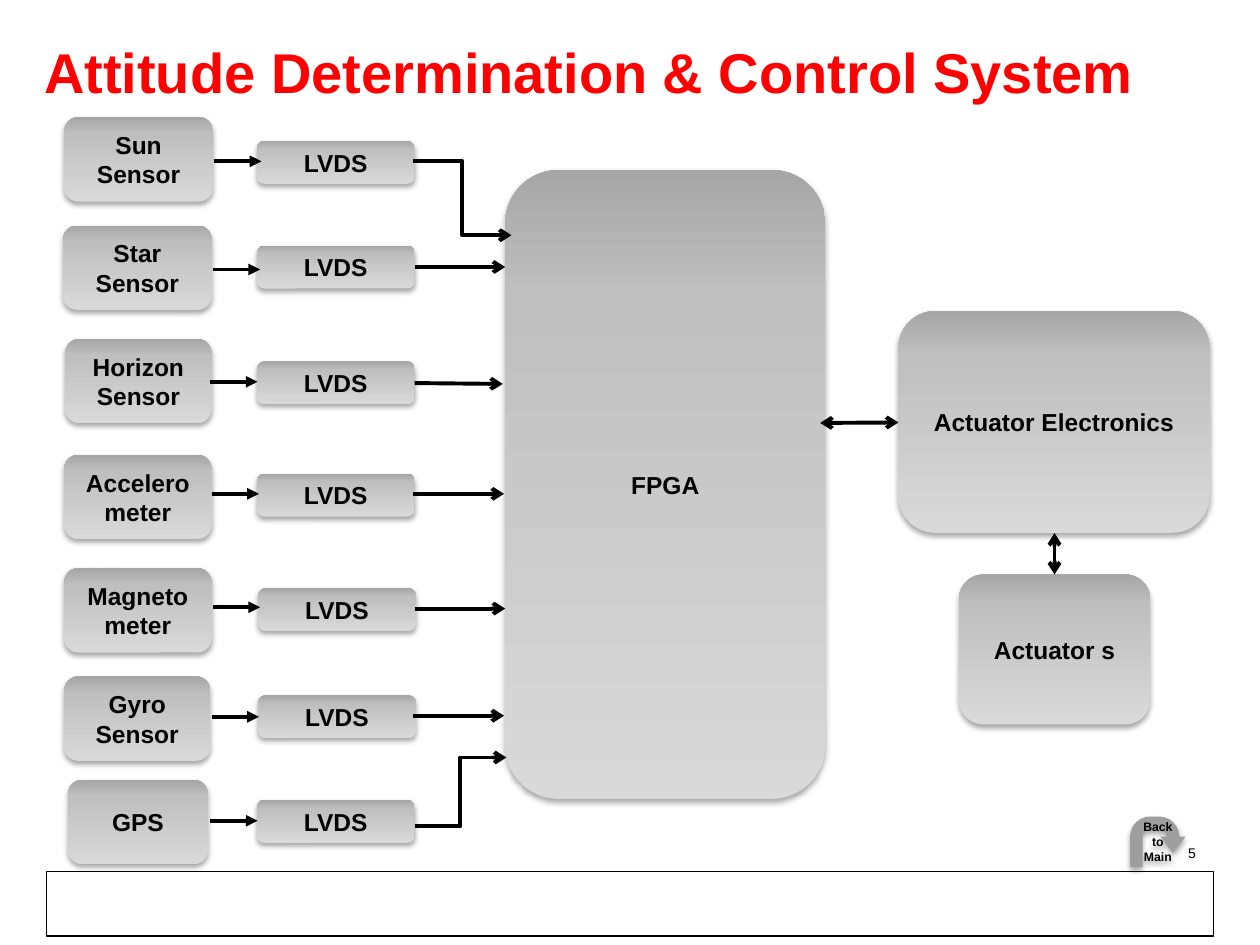
from lxml.etree import SubElement
from pptx import Presentation
from pptx.dml.color import RGBColor
from pptx.enum.shapes import MSO_CONNECTOR, MSO_SHAPE
from pptx.enum.text import MSO_ANCHOR, PP_ALIGN
from pptx.oxml import parse_xml
from pptx.oxml.ns import nsdecls, qn
from pptx.util import Pt

COLORS = {"title": "FF0000", "ink": "000000", "arrow": "9E9E9E",
          "bottom": "D9D9D9", "middle": "BFBFBF", "top": "A6A6A6"}
GRADIENT = f"""<a:gradFill {nsdecls('a')} rotWithShape="1"><a:gsLst>
<a:gs pos="0"><a:srgbClr val="{COLORS['bottom']}"/></a:gs>
<a:gs pos="80000"><a:srgbClr val="{COLORS['middle']}"/></a:gs>
<a:gs pos="100000"><a:srgbClr val="{COLORS['top']}"/></a:gs>
</a:gsLst><a:lin ang="16200000" scaled="0"/></a:gradFill>"""
SHADOW = f"""<a:effectLst {nsdecls('a')}>
<a:outerShdw blurRad="40000" dist="23000" dir="5400000" rotWithShape="0">
<a:srgbClr val="{COLORS['ink']}"><a:alpha val="35000"/></a:srgbClr>
</a:outerShdw></a:effectLst>"""


def add_box(text, left, top, width, height, size=14, kind=MSO_SHAPE.ROUNDED_RECTANGLE):
    """Add a shadowed shape with bold centred text; rounded boxes get the grey gradient."""
    box = slide.shapes.add_shape(kind, Pt(left), Pt(top), Pt(width), Pt(height))
    box.line.fill.background()
    properties = box._element.spPr
    if kind == MSO_SHAPE.ROUNDED_RECTANGLE:
        properties.find(qn("a:prstGeom")).addnext(parse_xml(GRADIENT))
    else:
        box.fill.solid()
        box.fill.fore_color.rgb = RGBColor.from_string(COLORS["arrow"])
    properties.append(parse_xml(SHADOW))
    box.text_frame.text = text
    box.text_frame.word_wrap = True
    box.text_frame.vertical_anchor = MSO_ANCHOR.MIDDLE
    para = box.text_frame.paragraphs[0]
    para.alignment = PP_ALIGN.CENTER
    font = para.runs[0].font
    font.name, font.size, font.bold = "Arial", Pt(size), True
    font.color.rgb = RGBColor.from_string(COLORS["ink"])
    return box


def add_arrow(start, end, tip="arrow", double=False):
    """Join two points, with an elbow where their heights differ clearly."""
    bent = abs(start[0] - end[0]) > 5 and abs(start[1] - end[1]) > 5
    kind = MSO_CONNECTOR.ELBOW if bent else MSO_CONNECTOR.STRAIGHT
    arrow = slide.shapes.add_connector(kind, *(Pt(value) for value in (*start, *end)))
    arrow.line.width = Pt(2.25)
    arrow.line.color.rgb = RGBColor.from_string(COLORS["ink"])
    line = arrow.line._ln
    if double:
        SubElement(line, qn("a:headEnd"), type=tip)
    SubElement(line, qn("a:tailEnd"), type=tip)
    SubElement(arrow._element.spPr, qn("a:effectLst"))


deck = Presentation()
deck.slide_width, deck.slide_height = Pt(720), Pt(540)
slide = deck.slides.add_slide(deck.slide_layouts[5])

footer = slide.shapes.add_shape(MSO_SHAPE.RECTANGLE, Pt(26.6), Pt(498.2), Pt(666.7), Pt(36.7))
footer.shadow.inherit = False
footer.fill.background()
footer.line.width = Pt(0.75)
footer.line.color.rgb = RGBColor.from_string(COLORS["ink"])

title = slide.shapes.title
title.left, title.top, title.width, title.height = Pt(18), Pt(11.5), Pt(666), Pt(64)
title.text_frame.text = "Attitude Determination & Control System"
title.text_frame.vertical_anchor = MSO_ANCHOR.MIDDLE
para = title.text_frame.paragraphs[0]
para.alignment = PP_ALIGN.LEFT
para.line_spacing = 0.85
font = para.runs[0].font
font.name, font.size, font.bold = "Arial", Pt(32), True
font.color.rgb = RGBColor.from_string(COLORS["title"])

number = slide.shapes.add_textbox(Pt(522.7), Pt(478.8), Pt(167.8), Pt(16.6))
number.text_frame.word_wrap = True
number.text_frame.text = "5"
para = number.text_frame.paragraphs[0]
para.alignment = PP_ALIGN.RIGHT
font = para.runs[0].font
font.name, font.size = "Arial", Pt(8)
font.color.rgb = RGBColor.from_string(COLORS["ink"])

add_box("FPGA", 288.7, 97.2, 182.9, 359.3)
add_box("Actuator Electronics", 513.4, 177.8, 177.8, 126.7)
add_box("Actuator s", 547.9, 328.3, 109.4, 85.7)

# name, sensor left/top/width, LVDS left/top, sensor arrow x/y, FPGA arrow start and end
channels = [
    ("Sun Sensor", 36.7, 67, 85, 146.9, 80.6, 122.4, 92.2, (236.2, 92.2), (292.3, 134.4)),
    ("Star Sensor", 36, 128.9, 85, 146.9, 140.4, 121.7, 154, (236.9, 152.6), (288.7, 152.6)),
    ("Horizon Sensor", 37.4, 193.7, 83.5, 146.9, 206.6, 120.2, 218.2, (236.9, 218.9), (287.3, 219.4)),
    ("Accelerometer", 36.7, 259.9, 84.2, 146.9, 270.7, 121, 282.2, (236.2, 282.2), (288, 282.2)),
    ("Magneto meter", 36.7, 324.7, 84.2, 147.6, 336.2, 121.7, 347, (236.9, 347.8), (288.7, 347.8)),
    ("Gyro Sensor", 36.7, 386.6, 83.5, 147.6, 397.4, 121, 409.6, (236.2, 409), (288, 409)),
    ("GPS", 38.9, 445.7, 79.9, 146.9, 457.2, 120.2, 469, (236.9, 472.3), (289.4, 432.9)),
]
for (name, left, top, width, lvds_left, lvds_top,
     arrow_left, arrow_y, start, end) in channels:
    add_box(name, left, top, width, 48.2)
    add_box("LVDS", lvds_left, lvds_top, 90, 24.5)
    add_arrow((arrow_left, arrow_y), (arrow_left + 27, arrow_y), tip="triangle")
    add_arrow(start, end)

add_arrow((513.4, 241.4), (468.7, 241.7), double=True)
add_arrow((602.6, 304.6), (602.6, 328.3), double=True)

back = add_box("Back to Main", 645.8, 466.6, 31.7, 28.8, size=7, kind=MSO_SHAPE.U_TURN_ARROW)
for index, value in enumerate((0.25, 0.25, 0.32, 0.44, 0.72)):
    back.adjustments[index] = value

deck.save("out.pptx")
